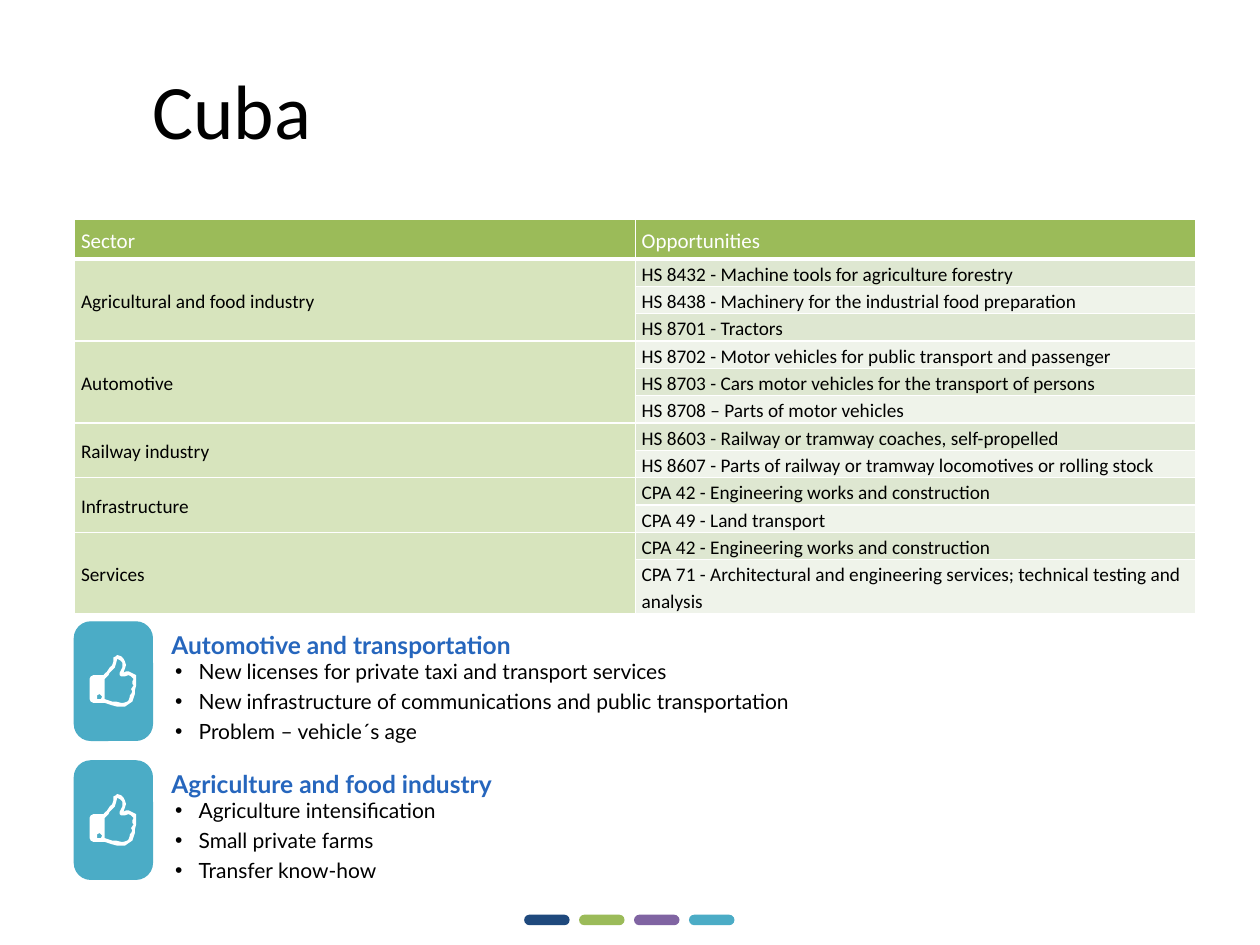
from lxml.etree import SubElement
from pptx import Presentation
from pptx.dml.color import RGBColor
from pptx.enum.shapes import MSO_SHAPE as Shape
from pptx.enum.text import MSO_ANCHOR as Anchor, MSO_AUTO_SIZE as AutoSize, PP_ALIGN as Align
from pptx.oxml.ns import qn
from pptx.util import Pt

TITLE = "Cuba"
HEADER = ("Sector", "Opportunities")
SECTORS = [
    ("Agricultural and food industry", [
        "HS 8432 - Machine tools for agriculture forestry",
        "HS 8438 - Machinery for the industrial food preparation",
        "HS 8701 - Tractors"]),
    ("Automotive", [
        "HS 8702 - Motor vehicles for public transport and passenger",
        "HS 8703 - Cars motor vehicles for the transport of persons",
        "HS 8708 – Parts of motor vehicles"]),
    ("Railway industry", [
        "HS 8603 - Railway or tramway coaches, self-propelled",
        "HS 8607 - Parts of railway or tramway locomotives or rolling stock"]),
    ("Infrastructure", [
        "CPA 42 - Engineering works and construction",
        "CPA 49 - Land transport"]),
    ("Services", [
        "CPA 42 - Engineering works and construction",
        "CPA 71 - Architectural and engineering services; technical testing and analysis"]),
]
HIGHLIGHTS = [
    ("Automotive and transportation", [
        "New licenses for private taxi and transport services",
        "New infrastructure of communications and public transportation",
        "Problem – vehicle´s age"]),
    ("Agriculture and food industry", [
        "Agriculture intensification",
        "Small private farms",
        "Transfer know-how"]),
]
PILLS = ["1F497D", "9BBB59", "8064A2", "4BACC6"]
BANDS = ["DEE7D1", "EFF3EA"]
GREEN, PALE_GREEN, TEAL, BLUE = "9BBB59", "D7E4BD", "4BACC6", "2666BD"
BLACK, WHITE = "000000", "FFFFFF"

THUMB_OUTLINE = [
    (37, 22), (37, 24), (36, 28), (36, 31), (35, 34), (34, 37), (31, 39), (28, 41), (25, 41),
    (22, 41), (18, 40), (15, 39), (12, 38), (3, 38), (1, 37), (0, 35), (0, 19), (1, 17), (3, 16),
    (11, 16), (12, 15), (14, 13), (16, 10), (18, 8), (19, 5), (19, 2), (21, 1), (22, 0), (25, 1),
    (27, 3), (28, 5), (29, 8), (28, 11), (27, 14), (29, 13), (31, 13), (33, 14), (35, 15),
    (37, 16), (37, 19)]
CUFF_BUTTON = [(8, 35), (9, 35), (10, 33), (9, 32), (8, 31), (6, 32), (6, 33), (6, 35)]
THUMB_INSIDE = [
    (33, 27), (35, 24), (34, 23), (34, 21), (35, 19), (34, 18), (33, 17), (31, 16), (28, 17),
    (25, 17), (24, 16), (24, 14), (25, 12), (26, 10), (26, 6), (25, 5), (24, 4), (22, 3), (21, 7),
    (20, 10), (18, 12), (16, 14), (15, 16), (12, 19), (12, 35), (15, 36), (18, 37), (21, 37),
    (25, 38), (27, 38), (30, 37), (31, 36), (32, 33), (32, 32), (33, 31), (34, 29)]


def color(value):
    return RGBColor.from_string(value)


def place(box, left, top, width, height):
    box.left, box.top, box.width, box.height = Pt(left), Pt(top), Pt(width), Pt(height)


def paint(shape, fill, line=None):
    shape.shadow.inherit = False
    shape.fill.solid()
    shape.fill.fore_color.rgb = color(fill)
    if line:
        shape.line.color.rgb = color(line)
        shape.line.width = Pt(0.75)
    else:
        shape.line.fill.background()


def style(para, font, size, fill, spacing, before=0, bold=False):
    para.alignment = Align.LEFT
    para.line_spacing = spacing
    para.space_before = Pt(before)
    for span in para.runs:
        span.font.name, span.font.size, span.font.bold = font, Pt(size), bold
        span.font.color.rgb = color(fill)


def write(box, lines, font, size, fill, before=0, bold=False, indent=0):
    frame = box.text_frame
    frame.text = "\n".join(lines)
    frame.auto_size, frame.word_wrap = AutoSize.NONE, True
    frame.vertical_anchor = Anchor.TOP
    frame.margin_left = frame.margin_right = frame.margin_top = frame.margin_bottom = 0
    for para in frame.paragraphs:
        style(para, font, size, fill, 1.2, before, bold)
        properties = para._p.get_or_add_pPr()
        properties.set("marL", str(Pt(indent)))
        properties.set("indent", str(-Pt(indent)))


def add_pill(page, left, top, width, height, radius, fill, line=None):
    pill = page.shapes.add_shape(Shape.ROUNDED_RECTANGLE, Pt(left), Pt(top), Pt(width), Pt(height))
    pill.adjustments[0] = radius
    paint(pill, fill, line)


def add_thumb(page, left, top):
    builder = page.shapes.build_freeform(*THUMB_OUTLINE[0], scale=Pt(0.72))
    builder.add_line_segments(THUMB_OUTLINE[1:])
    for contour in (CUFF_BUTTON, THUMB_INSIDE):
        builder.move_to(*contour[0])
        builder.add_line_segments(contour[1:])
    paint(builder.convert_to_shape(Pt(left), Pt(top)), WHITE)


def fill_cell(cell, text, size, ink, fill, bottom=1):
    cell.text = text
    cell.vertical_anchor = Anchor.MIDDLE
    cell.margin_left = cell.margin_right = Pt(3.6)
    cell.margin_top = cell.margin_bottom = 0
    style(cell.text_frame.paragraphs[0], "Calibri", size, ink, 1.15)
    properties = cell._tc.get_or_add_tcPr()
    for side, width in (("L", 1), ("R", 1), ("T", 1), ("B", bottom)):
        border = SubElement(properties, qn(f"a:ln{side}"), w=str(Pt(width)))
        SubElement(SubElement(border, qn("a:solidFill")), qn("a:srgbClr"), val=WHITE)
    cell.fill.solid()
    cell.fill.fore_color.rgb = color(fill)


def add_sector_table(page):
    count = 1 + sum(len(items) for _, items in SECTORS)
    table = page.shapes.add_table(count, 2, Pt(42.7), Pt(125.5), Pt(640.8), Pt(220)).table
    for row in table.rows:
        row.height = Pt(15.5)
    table.rows[0].height = Pt(22.5)
    for column, text in enumerate(HEADER):
        fill_cell(table.cell(0, column), text, 12, WHITE, GREEN, bottom=3)
    row = 1
    for sector, items in SECTORS:
        first = row
        for item in items:
            fill_cell(table.cell(row, 0), sector if row == first else "", 11, BLACK, PALE_GREEN)
            fill_cell(table.cell(row, 1), item, 11, BLACK, BANDS[(row - 1) % 2])
            row += 1
        table.cell(first, 0).merge(table.cell(row - 1, 0))


def main():
    deck = Presentation()
    deck.slide_width, deck.slide_height = Pt(720), Pt(540)
    page = deck.slides.add_slide(deck.slide_layouts.get_by_name("Comparison"))
    title, *bodies = page.placeholders

    place(title, 87, 25.3, 562, 24)
    write(title, [TITLE], "Calibri", 44, BLACK, before=7.1)
    for index, fill in enumerate(PILLS):
        add_pill(page, 299.5 + 31.4 * index, 522.7, 26, 6, 0.5, fill)
    add_sector_table(page)

    for index, (heading, items) in enumerate(HIGHLIGHTS):
        top = 355.4 + 79.4 * index
        heading_box, list_box = bodies[2 * index:2 * index + 2]
        add_pill(page, 42.5, top, 44.6, 67.7, 0.21, TEAL, TEAL)
        add_thumb(page, 51.2, top + 18.9)
        place(heading_box, 97.9, top + 1, 338, 20)
        write(heading_box, [heading], "Lato", 14, BLUE, before=7.1, bold=True)
        place(list_box, 100, top + 18, 572, 48)
        write(list_box, items, "Lato", 12, BLACK, indent=13.5)

    deck.save("out.pptx")


if __name__ == "__main__":
    main()
